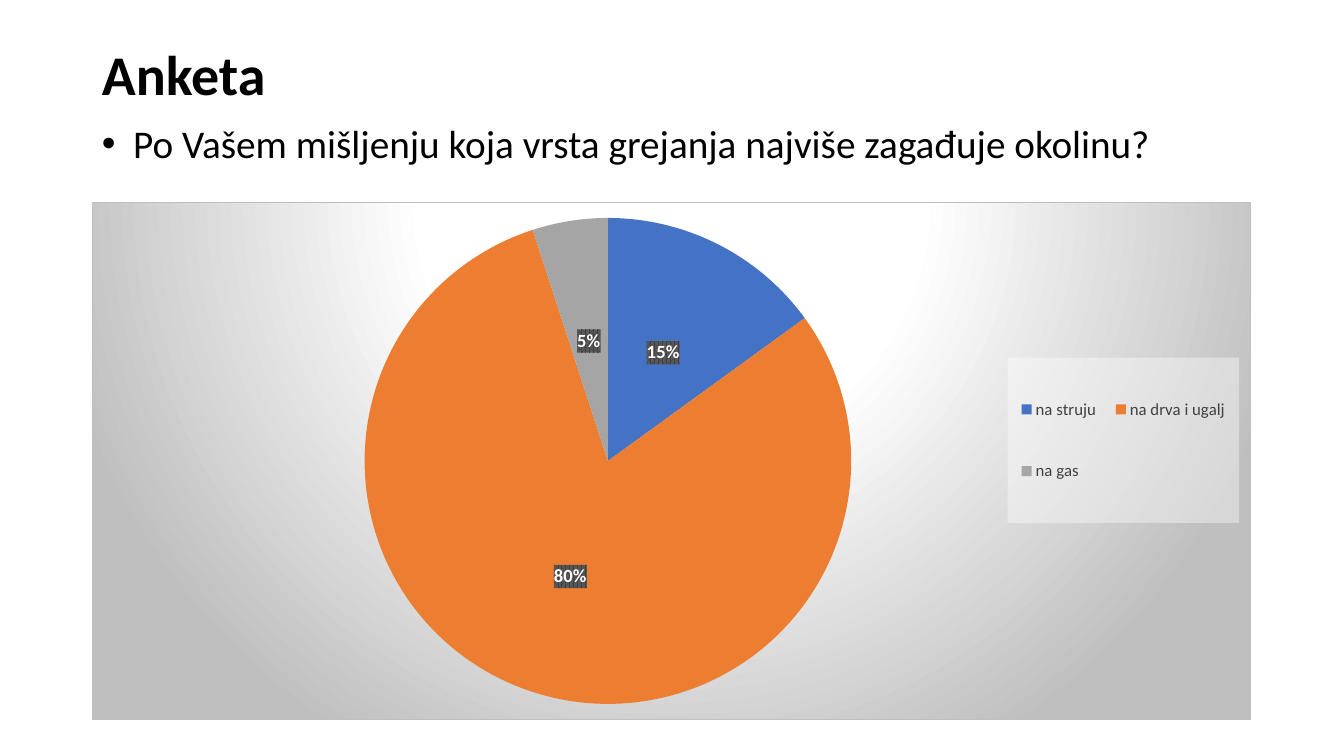
import dataclasses

import lxml.etree
import pptx
import pptx.chart.data
import pptx.dml.color
import pptx.enum.chart
import pptx.enum.text
import pptx.oxml
import pptx.oxml.ns
import pptx.util

NS = pptx.oxml.ns.nsdecls("c", "a")
qn = pptx.oxml.ns.qn


@dataclasses.dataclass(frozen=True)
class Theme:
    font: str = "Calibri"
    text: str = "000000"
    muted: str = "404040"
    light: str = "FFFFFF"
    edge: str = "BFBFBF"
    label_stripe: str = "595959"
    slices: tuple = ("4472C4", "ED7D31", "A5A5A5")
    title_size: float = 40
    body_size: float = 28
    label_size: float = 13.3
    legend_size: float = 12
    chart_size: float = 10


def solid(color, alpha=100):
    return (f'<a:solidFill><a:srgbClr val="{color}"><a:alpha val="{alpha * 1000}"/>'
            '</a:srgbClr></a:solidFill>')


def shape_properties(content):
    return pptx.oxml.parse_xml(f"<c:spPr {NS}>{content}</c:spPr>")


def set_layout(element, index, target, **fractions):
    """Place a chart part by fractions of the chart's width and height."""
    for old in element.findall(qn("c:layout")):
        element.remove(old)
    inner = f'<c:layoutTarget val="{target}"/>' if target else ""
    modes = '<c:xMode val="edge"/><c:yMode val="edge"/>'
    values = "".join(f'<c:{k} val="{v}"/>' for k, v in fractions.items())
    element.insert(index, pptx.oxml.parse_xml(
        f"<c:layout {NS}><c:manualLayout>{inner}{modes}{values}</c:manualLayout></c:layout>"))


class SlideBuilder:
    SCALE = 914400 / 100.8

    def __init__(self, prs, theme):
        self.theme = theme
        self.s = prs.slides.add_slide(prs.slide_layouts[6])

    def box(self, *px):
        return [pptx.util.Emu(round(v * self.SCALE)) for v in px]

    def style(self, font, size, color, bold=False):
        values = {"name": self.theme.font, "size": pptx.util.Pt(size), "bold": bold}
        for key, value in values.items():
            setattr(font, key, value)
        font.color.rgb = pptx.dml.color.RGBColor.from_string(color)

    def text(self, box, content, size, bold=False, anchor="TOP", bullet=None, spacing=0.9):
        tf = self.s.shapes.add_textbox(*self.box(*box)).text_frame
        tf.word_wrap = True
        tf.vertical_anchor = pptx.enum.text.MSO_ANCHOR[anchor]
        p = tf.paragraphs[0]
        p.line_spacing = spacing
        if bullet:
            pPr = p._p.get_or_add_pPr()
            indent = pptx.util.Inches(0.31)
            pPr.set("marL", str(indent))
            pPr.set("indent", str(-indent))
            lxml.etree.SubElement(pPr, qn("a:buFont")).set("typeface", "Arial")
            lxml.etree.SubElement(pPr, qn("a:buChar")).set("char", bullet)
        r = p.add_run()
        r.text = content
        self.style(r.font, size, self.theme.text, bold)

    def pie(self, box, name, shares):
        t = self.theme
        data = pptx.chart.data.CategoryChartData()
        data.categories = list(shares)
        data.add_series(name, list(shares.values()))
        chart = self.s.shapes.add_chart(
            pptx.enum.chart.XL_CHART_TYPE.PIE, *self.box(*box), data).chart
        chart.has_title = False
        self.style(chart.font, t.chart_size, t.text)
        plot = chart.plots[0]
        plot.vary_by_categories = True
        for i, color in enumerate(t.slices):
            fill = plot.series[0].points[i].format.fill
            fill.solid()
            fill.fore_color.rgb = pptx.dml.color.RGBColor.from_string(color)
        self.pie_labels(plot)
        self.pie_legend(chart)
        self.pie_background(chart)

    def pie_labels(self, plot):
        t = self.theme
        labels = plot.series[0].data_labels
        values = {"show_percentage": True, "show_value": False, "show_legend_key": False,
                  "number_format": "0%", "number_format_is_linked": False,
                  "position": pptx.enum.chart.XL_LABEL_POSITION.CENTER}
        for key, value in values.items():
            setattr(labels, key, value)
        self.style(labels.font, t.label_size, t.light, True)
        labels._element.find(qn("c:txPr")).addprevious(shape_properties(
            f'<a:pattFill prst="pct75"><a:fgClr><a:srgbClr val="{t.muted}"/></a:fgClr>'
            f'<a:bgClr><a:srgbClr val="{t.label_stripe}"/></a:bgClr></a:pattFill>'))

    def pie_legend(self, chart):
        t = self.theme
        chart.has_legend = True
        legend = chart.legend
        legend.position = pptx.enum.chart.XL_LEGEND_POSITION.RIGHT
        legend.include_in_layout = False
        self.style(legend.font, t.legend_size, t.muted)
        element = legend._element
        element.find(qn("c:txPr")).addprevious(shape_properties(solid(t.light, 39)))
        set_layout(element, 1, None, x=0.79, y=0.3, w=0.2, h=0.32)

    def pie_background(self, chart):
        t = self.theme
        stops = "".join(f'<a:gs pos="{pos * 1000}"><a:srgbClr val="{color}"/></a:gs>'
                        for pos, color in ((0, t.light), (39, t.light), (100, t.edge)))
        space = chart._chartSpace
        space.find(qn("c:chart")).addnext(shape_properties(
            f'<a:gradFill><a:gsLst>{stops}</a:gsLst><a:path path="circle">'
            '<a:fillToRect l="50000" t="-80000" r="50000" b="180000"/></a:path></a:gradFill>'
            f'<a:ln w="{pptx.util.Pt(0.75)}">{solid(t.edge)}</a:ln>'))
        plot_area = space.find(qn("c:chart")).find(qn("c:plotArea"))
        set_layout(plot_area, 0, "inner", x=0.23, y=0.03, w=0.43, h=0.94)


def main():
    prs = pptx.Presentation()
    prs.slide_width = pptx.util.Inches(13.33)
    prs.slide_height = pptx.util.Inches(7.5)
    theme = Theme()
    slide = SlideBuilder(prs, theme)
    slide.text((92, 40, 1159, 74), "Anketa", theme.title_size, bold=True, anchor="MIDDLE")
    slide.pie((92, 202, 1159, 518), "Series 1",
              {"na struju": 15, "na drva i ugalj": 80, "na gas": 5})
    slide.text((92, 114, 1092, 89),
               "Po Vašem mišljenju koja vrsta grejanja najviše zagađuje okolinu?",
               theme.body_size, bullet="•", spacing=1.0)
    prs.save("out.pptx")


if __name__ == "__main__":
    main()
